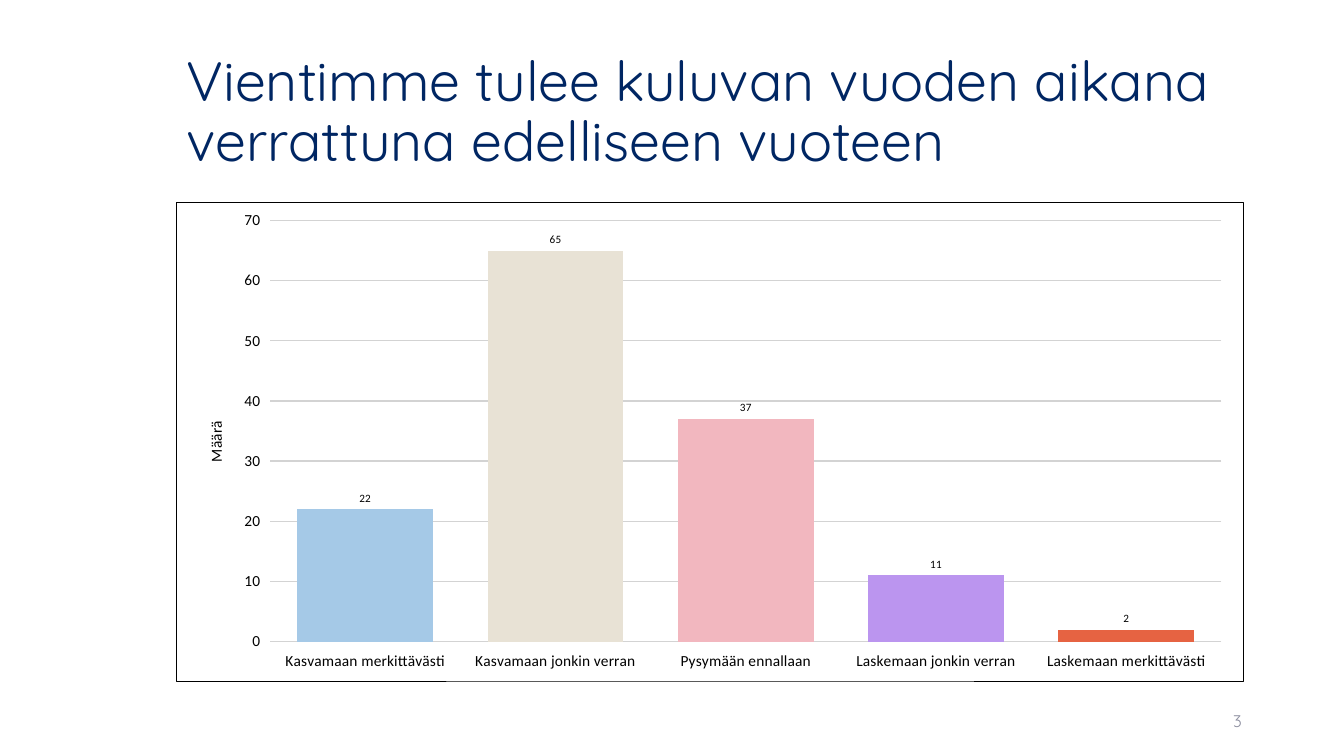
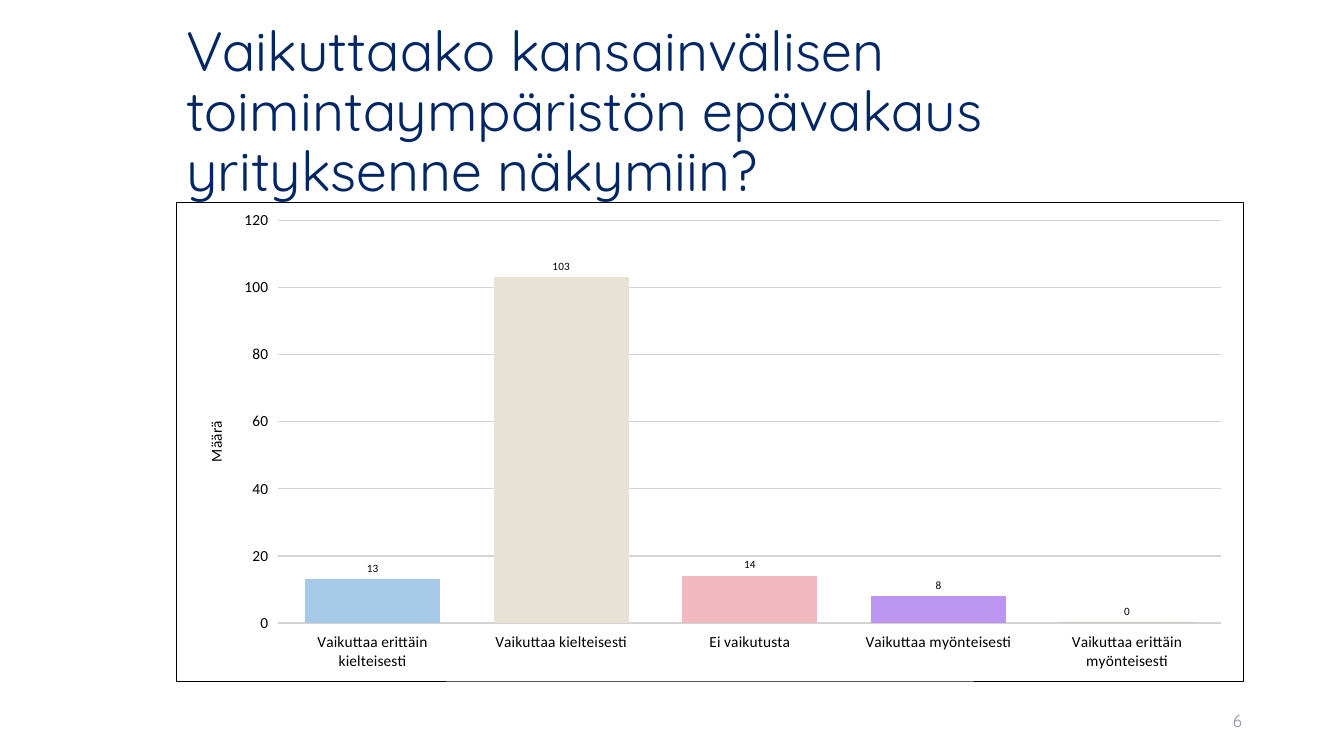
"""Build two survey result slides, each with a title, a column chart and a page number."""
from dataclasses import dataclass

import lxml.etree
import pptx
import pptx.chart.chart
import pptx.chart.data
import pptx.dml.color
import pptx.enum.chart
import pptx.enum.text
import pptx.oxml
import pptx.oxml.ns
import pptx.presentation
import pptx.slide
import pptx.text.text
import pptx.util

Pt = pptx.util.Pt
RGBColor = pptx.dml.color.RGBColor
qn = pptx.oxml.ns.qn


@dataclass(frozen=True)
class Theme:
    heading_font: str = "Quicksand"
    chart_font: str = "Calibri"
    heading: str = "002663"
    page_number: str = "8C8E9F"
    ink: str = "000000"
    grid: str = "D3D3D3"
    paper: str = "FFFFFF"
    columns: tuple[str, ...] = ("A5C9E7", "E8E2D5", "F2B7BF", "BB95EF", "E66342")
    heading_size: float = 39.6
    page_number_size: float = 12
    axis_size: float = 11
    label_size: float = 8


@dataclass(frozen=True)
class Area:
    left: float
    top: float
    width: float
    height: float

    def lengths(self) -> tuple[pptx.util.Length, ...]:
        return tuple(Pt(value) for value in (self.left, self.top, self.width, self.height))


@dataclass(frozen=True)
class Question:
    title: str
    number: int
    answers: dict[str, int]
    axis_maximum: int
    axis_step: int
    plot: Area


THEME = Theme()
TITLE_AREA = Area(126, 28.8, 762.5, 104.4)
CHART_AREA = Area(126, 144, 762.5, 342.7)
NUMBER_AREA = Area(678.2, 500.4, 216, 28.8)
AXIS_TITLE_AREA = Area(18.5, 154.5, 0, 0)

QUESTIONS = (
    Question(
        "Vientimme tulee kuluvan vuoden aikana verrattuna edelliseen vuoteen",
        3,
        {
            "Kasvamaan merkittävästi": 22,
            "Kasvamaan jonkin verran": 65,
            "Pysymään ennallaan": 37,
            "Laskemaan jonkin verran": 11,
            "Laskemaan merkittävästi": 2,
        },
        70,
        10,
        Area(66.8, 13.3, 680, 301.3),
    ),
    Question(
        "Vaikuttaako kansainvälisen toimintaympäristön epävakaus yrityksenne näkymiin?",
        6,
        {
            "Vaikuttaa erittäin kielteisesti": 13,
            "Vaikuttaa kielteisesti": 103,
            "Ei vaikutusta": 14,
            "Vaikuttaa myönteisesti": 8,
            "Vaikuttaa erittäin myönteisesti": 0,
        },
        120,
        20,
        Area(72.6, 13.3, 674.2, 288),
    ),
)


def style_font(font: pptx.text.text.Font, name: str, size: float, color: str) -> None:
    font.name = name
    font.size = Pt(size)
    font.bold = False
    font.color.rgb = RGBColor.from_string(color)


def fill_frame(frame: pptx.text.text.TextFrame, text: str, size: float, color: str,
               alignment: pptx.enum.text.PP_ALIGN) -> None:
    frame.text = text
    frame.word_wrap = True
    frame.auto_size = pptx.enum.text.MSO_AUTO_SIZE.NONE
    frame.vertical_anchor = pptx.enum.text.MSO_ANCHOR.MIDDLE
    para = frame.paragraphs[0]
    para.alignment = alignment
    style_font(para.runs[0].font, THEME.heading_font, size, color)


def add_title(page: pptx.slide.Slide, text: str) -> None:
    box = page.shapes.title
    box.left, box.top, box.width, box.height = TITLE_AREA.lengths()
    fill_frame(box.text_frame, text, THEME.heading_size, THEME.heading, pptx.enum.text.PP_ALIGN.LEFT)
    box.text_frame.paragraphs[0].line_spacing = 0.9


def add_page_number(page: pptx.slide.Slide, number: int) -> None:
    box = page.shapes.add_textbox(*NUMBER_AREA.lengths())
    fill_frame(box.text_frame, str(number), THEME.page_number_size, THEME.page_number,
               pptx.enum.text.PP_ALIGN.RIGHT)


def place_in_chart(element: lxml.etree.ElementBase, area: Area, index: int) -> None:
    for old in element.findall(qn("c:layout")):
        element.remove(old)
    layout = lxml.etree.Element(qn("c:layout"))
    manual = lxml.etree.SubElement(layout, qn("c:manualLayout"))
    settings = {"xMode": "edge", "yMode": "edge",
                "x": area.left / CHART_AREA.width, "y": area.top / CHART_AREA.height}
    if area.width:
        settings = {"layoutTarget": "inner", **settings,
                    "w": area.width / CHART_AREA.width, "h": area.height / CHART_AREA.height}
    for name, value in settings.items():
        lxml.etree.SubElement(manual, qn(f"c:{name}")).set("val", str(value))
    element.insert(index, layout)


def shape_properties(fill: str, line: str) -> lxml.etree.ElementBase:
    return pptx.oxml.parse_xml(
        f'<c:spPr {pptx.oxml.ns.nsdecls("c", "a")}>'
        f'<a:solidFill><a:srgbClr val="{fill}"/></a:solidFill>{line}</c:spPr>'
    )


def frame_chart(chart: pptx.chart.chart.Chart, plot: Area) -> None:
    space = chart.element if hasattr(chart, "element") else chart._chartSpace
    plot_area = space.find(f'{qn("c:chart")}/{qn("c:plotArea")}')
    place_in_chart(plot_area, plot, 0)
    plot_area.append(shape_properties(THEME.paper, "<a:ln><a:noFill/></a:ln>"))
    border = (f'<a:ln w="{Pt(0.5)}"><a:solidFill><a:srgbClr val="{THEME.ink}"/>'
              "</a:solidFill></a:ln>")
    space.find(qn("c:chart")).addnext(shape_properties(THEME.paper, border))
    title = plot_area.find(f'{qn("c:valAx")}/{qn("c:title")}')
    place_in_chart(title, AXIS_TITLE_AREA, 1)
    body = title.find(f'.//{qn("a:bodyPr")}')
    body.set("rot", "-5400000")
    body.set("vert", "horz")


def style_axes(chart: pptx.chart.chart.Chart, question: Question) -> None:
    for axis in (chart.category_axis, chart.value_axis):
        style_font(axis.tick_labels.font, THEME.chart_font, THEME.axis_size, THEME.ink)
        axis.format.line.fill.background()
    values = chart.value_axis
    values.minimum_scale = 0
    values.maximum_scale = question.axis_maximum
    values.major_unit = question.axis_step
    values.has_major_gridlines = True
    grid = values.major_gridlines.format.line
    grid.width = Pt(1)
    grid.color.rgb = RGBColor.from_string(THEME.grid)
    frame = values.axis_title.text_frame
    frame.text = "Määrä"
    style_font(frame.paragraphs[0].runs[0].font, THEME.chart_font, THEME.axis_size, THEME.ink)


def style_columns(chart: pptx.chart.chart.Chart) -> None:
    plot = chart.plots[0]
    plot.gap_width = 40
    plot.overlap = -2
    plot.vary_by_categories = False
    series = plot.series[0]
    for index, color in enumerate(THEME.columns):
        fill = series.points[index].format.fill
        fill.solid()
        fill.fore_color.rgb = RGBColor.from_string(color)
    labels = series.data_labels
    labels.show_value = True
    labels.number_format = "0"
    labels.number_format_is_linked = False
    labels.position = pptx.enum.chart.XL_LABEL_POSITION.OUTSIDE_END
    style_font(labels.font, THEME.chart_font, THEME.label_size, THEME.ink)


def add_answer_chart(page: pptx.slide.Slide, question: Question) -> None:
    data = pptx.chart.data.CategoryChartData()
    data.categories = list(question.answers)
    data.add_series("Series 1", list(question.answers.values()))
    kind = pptx.enum.chart.XL_CHART_TYPE.COLUMN_CLUSTERED
    chart = page.shapes.add_chart(kind, *CHART_AREA.lengths(), data).chart
    chart.has_legend = False
    chart.has_title = False
    style_font(chart.font, THEME.chart_font, THEME.axis_size, THEME.ink)
    style_axes(chart, question)
    style_columns(chart)
    frame_chart(chart, question.plot)


def add_question_page(deck: pptx.presentation.Presentation, question: Question) -> None:
    page = deck.slides.add_slide(deck.slide_layouts.get_by_name("Title Only"))
    add_title(page, question.title)
    add_page_number(page, question.number)
    add_answer_chart(page, question)


def main() -> None:
    deck = pptx.Presentation()
    deck.slide_width, deck.slide_height = Pt(960), Pt(540)
    for question in QUESTIONS:
        add_question_page(deck, question)
    deck.save("out.pptx")


if __name__ == "__main__":
    main()
